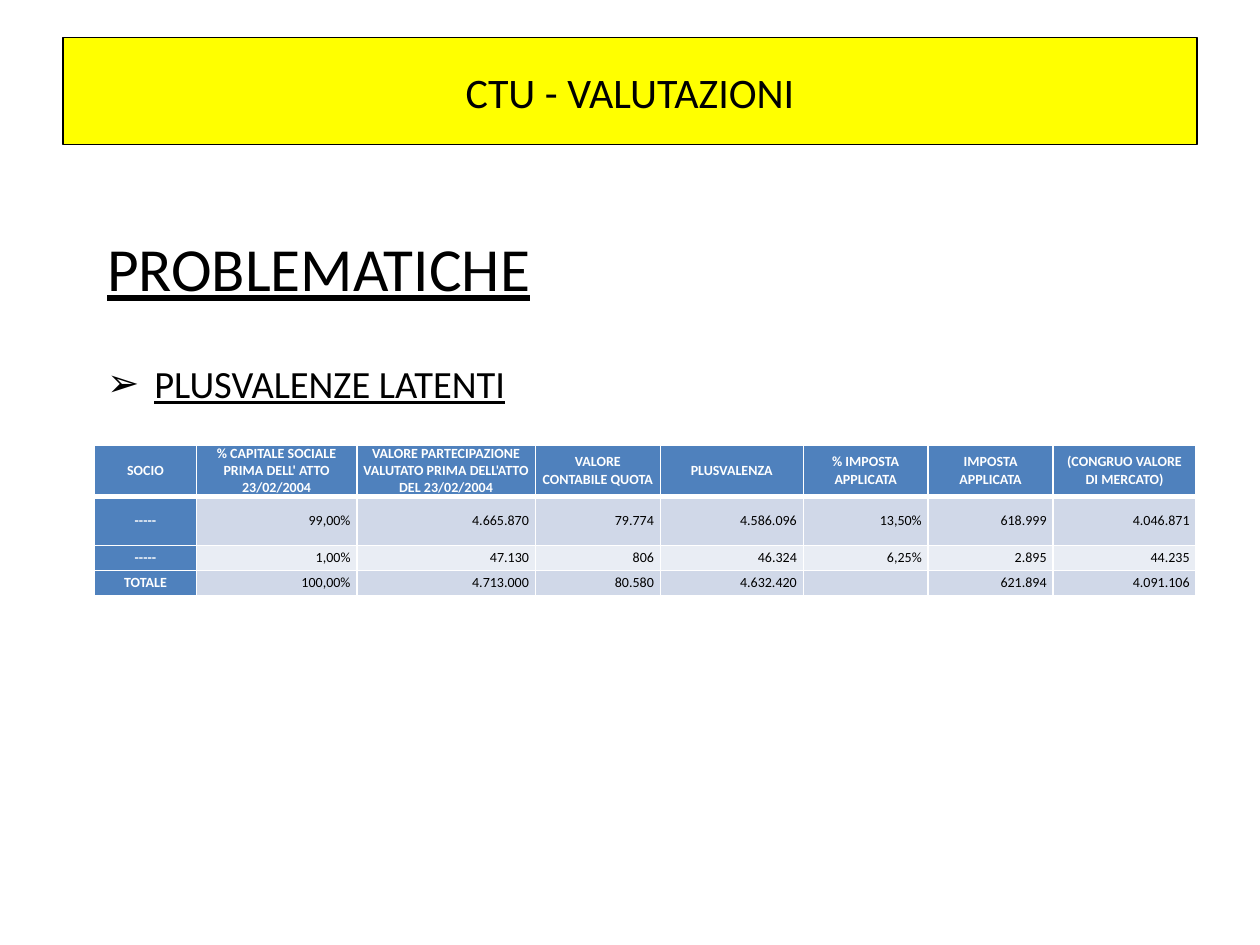
from lxml.etree import SubElement
from pptx import Presentation
from pptx.dml.color import RGBColor
from pptx.enum.text import MSO_ANCHOR as ANCHOR, MSO_AUTO_SIZE as FIT, PP_ALIGN as AL
from pptx.oxml import parse_xml
from pptx.oxml.ns import nsdecls, qn
from pptx.util import Pt


def paint(fill, color):
    fill.solid()
    fill.fore_color.rgb = RGBColor.from_string(color)


def style(p, size, color="000000", bold=False, underline=False):
    for r in p.runs:
        r.font.name = "Calibri"
        r.font.size = Pt(size)
        r.font.bold = bold
        r.font.underline = underline
        paint(r.font.fill, color)


prs = Presentation()
prs.slide_width, prs.slide_height = Pt(720), Pt(540)
s = prs.slides.add_slide(prs.slide_layouts[1])

title, body = s.placeholders
title.left, title.top, title.width, title.height = Pt(36), Pt(21.6), Pt(648), Pt(61.2)
paint(title.fill, "FFFF00")
paint(title.line.fill, "000000")
title.line.width = Pt(0.75)
tf = title.text_frame
tf.text = "CTU - VALUTAZIONI"
tf.auto_size = FIT.NONE
tf.vertical_anchor = ANCHOR.MIDDLE
p = tf.paragraphs[0]
p.alignment = AL.CENTER
style(p, 24)

body.left, body.top, body.width, body.height = Pt(54), Pt(128.2), Pt(648), Pt(356.4)
tf = body.text_frame
tf.text = "PROBLEMATICHE\nPLUSVALENZE LATENTI"
tf.auto_size = FIT.NONE
heading, item = tf.paragraphs
style(heading, 35, underline=True)
style(item, 22, underline=True)
item.space_before = Pt(32)
for p, indent, bullet in ((heading, 0, None), (item, 27, "➢")):
    pPr = p._p.get_or_add_pPr()
    pPr.set("marL", str(Pt(indent)))
    pPr.set("indent", str(-Pt(indent)))
    if bullet:
        SubElement(pPr, qn("a:buFont")).set("typeface", "Calibri")
        SubElement(pPr, qn("a:buChar")).set("char", bullet)
    else:
        SubElement(pPr, qn("a:buNone"))

rows = [
    ["SOCIO", "% CAPITALE SOCIALE PRIMA DELL' ATTO 23/02/2004",
     "VALORE PARTECIPAZIONE VALUTATO PRIMA DELL'ATTO DEL 23/02/2004",
     "VALORE CONTABILE QUOTA", "PLUSVALENZA", "% IMPOSTA APPLICATA",
     "IMPOSTA APPLICATA", "(CONGRUO VALORE DI MERCATO)"],
    ["-----", "99,00%", "4.665.870", "79.774", "4.586.096", "13,50%", "618.999", "4.046.871"],
    ["-----", "1,00%", "47.130", "806", "46.324", "6,25%", "2.895", "44.235"],
    ["TOTALE", "100,00%", "4.713.000", "80.580", "4.632.420", "", "621.894", "4.091.106"],
]
widths = [58.3, 91.7, 102, 71.4, 81.7, 71.4, 71.4, 81.7]
heights = [27.4, 28.1, 14.2, 14.2]
table = s.shapes.add_table(len(rows), len(widths), Pt(54), Pt(254.2),
                           Pt(sum(widths)), Pt(sum(heights))).table
for col, width in zip(table.columns, widths):
    col.width = Pt(width)
for row, height in zip(table.rows, heights):
    row.height = Pt(height)

for i, values in enumerate(rows):
    for j, value in enumerate(values):
        cell = table.cell(i, j)
        head = i == 0 or j == 0
        paint(cell.fill, "4F81BD" if head else "D0D8E8" if i % 2 else "E9EDF4")
        cell.vertical_anchor = ANCHOR.MIDDLE
        cell.margin_left = cell.margin_right = Pt(3.6)
        cell.margin_top = cell.margin_bottom = 0
        p = cell.text_frame.paragraphs[0]
        p.alignment = AL.CENTER if head else AL.RIGHT
        if value:
            p.text = value
            style(p, 8, "FFFFFF" if head else "000000", bold=head)
        else:
            SubElement(p._p, qn("a:endParaRPr")).set("sz", "800")
        top = 3 if i == 1 else 1
        bottom = 3 if i == 0 else 1
        tcPr = cell._tc.get_or_add_tcPr()
        for k, (side, width) in enumerate(zip("LRTB", (1, 1, top, bottom))):
            tcPr.insert(k, parse_xml(
                f'<a:ln{side} {nsdecls("a")} w="{Pt(width)}"><a:solidFill>'
                f'<a:srgbClr val="FFFFFF"/></a:solidFill></a:ln{side}>'))

prs.save("out.pptx")
